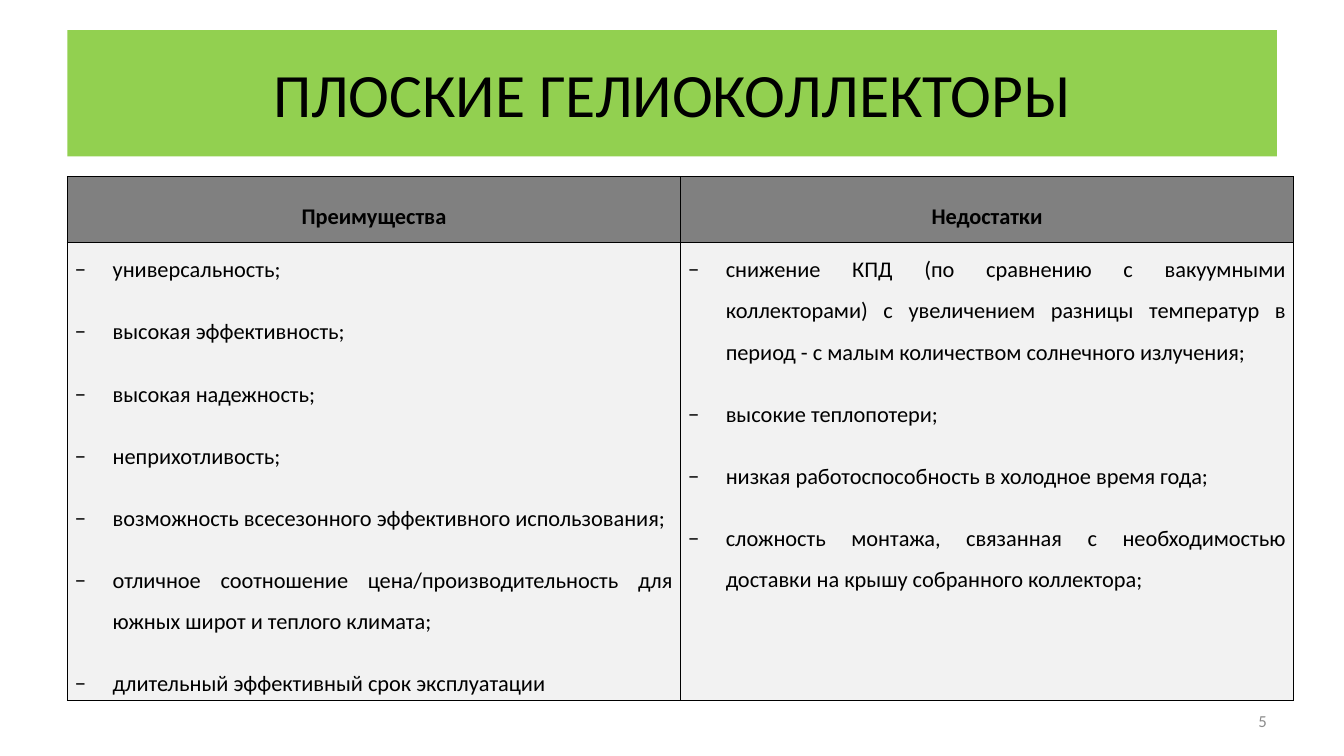
from lxml.etree import SubElement
from pptx import Presentation
from pptx.dml.color import RGBColor
from pptx.enum.shapes import MSO_SHAPE as Shape
from pptx.enum.text import MSO_ANCHOR as Anchor, PP_ALIGN as Align
from pptx.oxml import parse_xml
from pptx.oxml.ns import nsdecls, qn
from pptx.util import Cm, Pt

TITLE = "ПЛОСКИЕ ГЕЛИОКОЛЛЕКТОРЫ"
PAGE_NUMBER = "5"
COLUMNS = {
    "Преимущества": [
        "универсальность;",
        "высокая эффективность;",
        "высокая надежность;",
        "неприхотливость;",
        "возможность всесезонного эффективного использования;",
        "отличное соотношение цена/производительность для южных широт и теплого климата;",
        "длительный эффективный срок эксплуатации",
    ],
    "Недостатки": [
        "снижение КПД (по сравнению с вакуумными коллекторами) с увеличением разницы "
        "температур в период - с малым количеством солнечного излучения;",
        "высокие теплопотери;",
        "низкая работоспособность в холодное время года;",
        "сложность монтажа, связанная с необходимостью доставки на крышу собранного коллектора;",
    ],
}
COLORS = {"banner": "92D050", "header": "808080", "body": "F2F2F2",
          "text": "000000", "number": "8C8C8C"}
FONT = "Calibri"
LEFT = Cm(1.7)
TABLE_TOP, TABLE_WIDTH = Cm(4.45), Cm(30.9)
ROW_HEIGHTS = [Cm(1.67), Cm(11.53)]
BULLET_INDENT = Cm(0.95)


def color(name):
    return RGBColor.from_string(COLORS[name])


def write(frame, lines, size, align, tint="text", bold=False):
    frame.text = "\n".join(lines)
    for para in frame.paragraphs:
        para.alignment = align
        for span in para.runs:
            span.font.name = FONT
            span.font.size = Pt(size)
            span.font.bold = bold
            span.font.color.rgb = color(tint)


def add_borders(cell):
    properties = cell._tc.get_or_add_tcPr()
    for position, side in enumerate(("lnL", "lnR", "lnT", "lnB")):
        properties.insert(position, parse_xml(
            f'<a:{side} {nsdecls("a")} w="{Pt(1)}"><a:solidFill>'
            f'<a:srgbClr val="{COLORS["text"]}"/></a:solidFill></a:{side}>'))


def add_bullet(para):
    properties = para._p.get_or_add_pPr()
    properties.set("marL", str(BULLET_INDENT))
    properties.set("indent", str(-BULLET_INDENT))
    SubElement(properties, qn("a:buFont")).set("typeface", FONT)
    SubElement(properties, qn("a:buChar")).set("char", "−")


def fill_cell(cell, lines, is_header):
    cell.margin_left = cell.margin_right = Cm(0.19)
    cell.margin_top = cell.margin_bottom = 0
    cell.vertical_anchor = Anchor.MIDDLE if is_header else Anchor.TOP
    cell.fill.solid()
    cell.fill.fore_color.rgb = color("header" if is_header else "body")
    add_borders(cell)
    write(cell.text_frame, lines, 16, Align.CENTER if is_header else Align.JUSTIFY,
          bold=is_header)
    for para in cell.text_frame.paragraphs:
        para.line_spacing = 1.5
        para.space_before = Pt(15)
        if not is_header:
            add_bullet(para)


def main():
    deck = Presentation()
    deck.slide_width, deck.slide_height = Cm(33.87), Cm(19.05)
    page = deck.slides.add_slide(deck.slide_layouts[6])

    number = page.shapes.add_textbox(Cm(24.28), Cm(17.65), Cm(7.9), Cm(1.02))
    number.text_frame.word_wrap = True
    number.text_frame.vertical_anchor = Anchor.MIDDLE
    write(number.text_frame, [PAGE_NUMBER], 12, Align.RIGHT, "number")

    table = page.shapes.add_table(len(ROW_HEIGHTS), len(COLUMNS), LEFT, TABLE_TOP,
                                  TABLE_WIDTH, sum(ROW_HEIGHTS)).table
    table.horz_banding = False
    for row, height in zip(table.rows, ROW_HEIGHTS):
        row.height = height
    for index, (heading, points) in enumerate(COLUMNS.items()):
        fill_cell(table.cell(0, index), [heading], True)
        fill_cell(table.cell(1, index), points, False)

    banner = page.shapes.add_shape(Shape.RECTANGLE, LEFT, Cm(0.76), Cm(30.48), Cm(3.18))
    banner.shadow.inherit = False
    banner.fill.solid()
    banner.fill.fore_color.rgb = color("banner")
    banner.line.fill.background()
    banner.text_frame.word_wrap = True
    banner.text_frame.vertical_anchor = Anchor.MIDDLE
    write(banner.text_frame, [TITLE], 44, Align.CENTER)

    deck.save("out.pptx")


if __name__ == "__main__":
    main()
